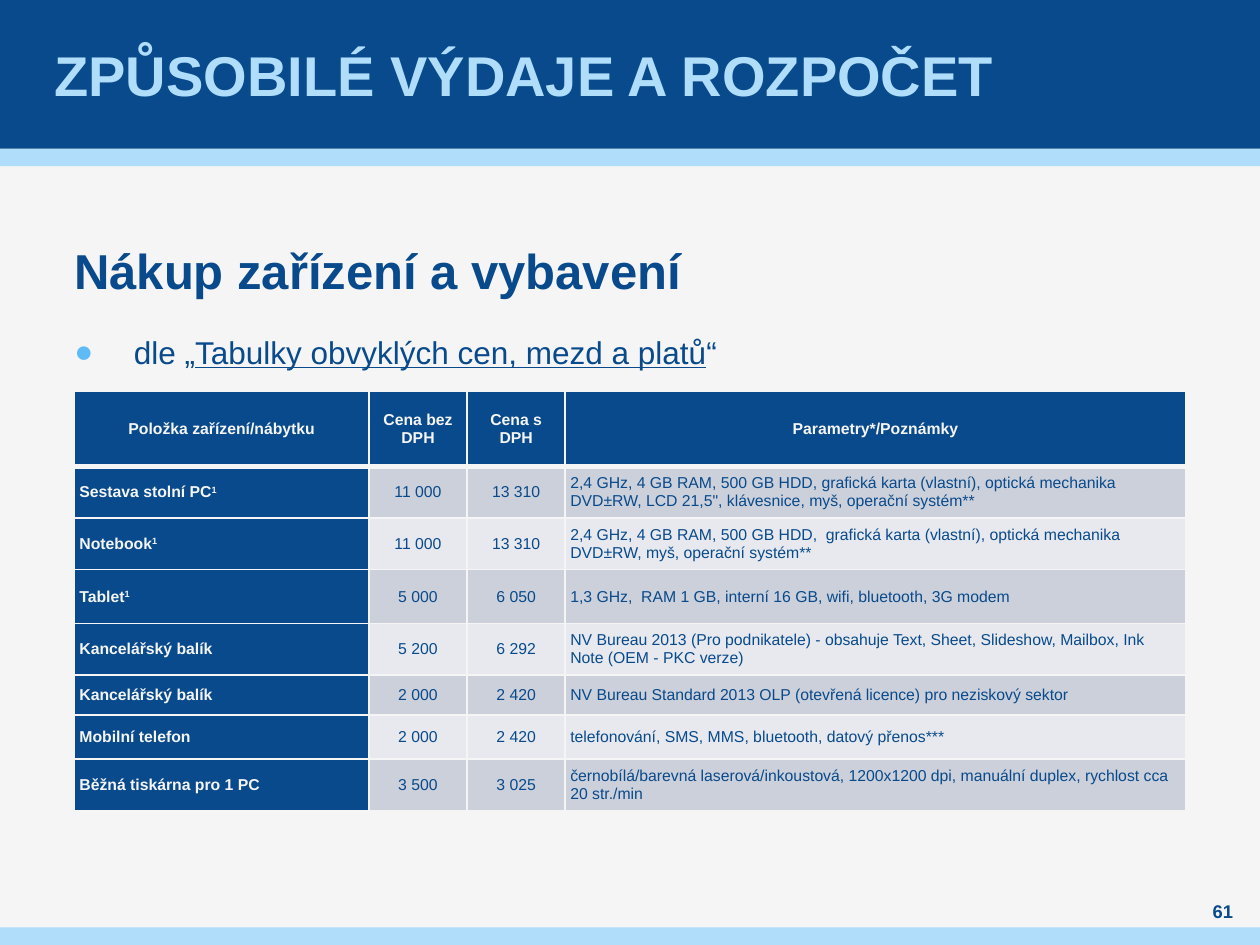
from dataclasses import dataclass

from lxml.etree import SubElement
from pptx import Presentation
from pptx.dml.color import RGBColor
from pptx.enum.shapes import MSO_SHAPE as Shape
from pptx.enum.text import MSO_ANCHOR as Anchor, MSO_AUTO_SIZE as AutoSize, PP_ALIGN as Align
from pptx.oxml.ns import qn
from pptx.util import Pt


@dataclass(frozen=True)
class Theme:
    font: str = "Arial"
    navy: str = "084A8B"
    sky: str = "AFDDFA"
    bullet: str = "5FBBF5"
    paper: str = "F5F5F5"
    bands: tuple = ("CCD0DA", "E7E9EE")
    title: float = 32
    heading: float = 28
    body: float = 18
    number: float = 10.5
    table: float = 9


theme = Theme()


def add_run(paragraph, text, size, color, bold=False):
    run = paragraph.add_run()
    run.text = text
    run.font.name = theme.font
    run.font.size = Pt(size)
    run.font.bold = bold
    run.font.color.rgb = RGBColor.from_string(color)
    return run


def set_frame(frame, anchor, side=0):
    frame.word_wrap = True
    frame.auto_size = AutoSize.NONE
    frame.vertical_anchor = anchor
    frame.margin_left = frame.margin_right = Pt(side)
    frame.margin_top = frame.margin_bottom = 0


presentation = Presentation()
presentation.slide_width = Pt(720)
presentation.slide_height = Pt(540)
slide = presentation.slides.add_slide(presentation.slide_layouts[1])
slide.background.fill.solid()
slide.background.fill.fore_color.rgb = RGBColor.from_string(theme.paper)

bars = [(85, 10, theme.sky), (0, 85, theme.navy), (530, 10, theme.sky)]
for position, (top, height, color) in enumerate(bars, start=2):
    bar = slide.shapes.add_shape(Shape.RECTANGLE, 0, Pt(top), Pt(720), Pt(height))
    bar.shadow.inherit = False
    bar.fill.solid()
    bar.fill.fore_color.rgb = RGBColor.from_string(color)
    bar.line.fill.background()
    slide.shapes._spTree.insert(position, bar._element)

title = slide.shapes.title
title.left, title.top, title.width, title.height = Pt(28.2), 0, Pt(663), Pt(85)
set_frame(title.text_frame, Anchor.MIDDLE, 2.9)
paragraph = title.text_frame.paragraphs[0]
paragraph.alignment = Align.LEFT
add_run(paragraph, "ZPŮSOBILÉ VÝDAJE A ROZPOČET", theme.title, theme.sky, True)

body = slide.placeholders[1]
body.left, body.top, body.width, body.height = Pt(42.5), Pt(142), Pt(635), Pt(340)
set_frame(body.text_frame, Anchor.TOP)
heading = body.text_frame.paragraphs[0]
item = body.text_frame.add_paragraph()
item.level = 1
for paragraph, alignment, indent in [(heading, Align.LEFT, 0), (item, Align.JUSTIFY, 34)]:
    paragraph.alignment = alignment
    paragraph.line_spacing = Pt(28.8)
    paragraph.space_before = paragraph.space_after = Pt(6)
    properties = paragraph._p.get_or_add_pPr()
    properties.set("marL", str(Pt(indent)))
    properties.set("indent", str(-Pt(indent)))
    if indent:
        bullet_color = SubElement(properties, qn("a:buClr"))
        SubElement(bullet_color, qn("a:srgbClr"), val=theme.bullet)
        SubElement(properties, qn("a:buFont"), typeface=theme.font)
        SubElement(properties, qn("a:buChar"), char="●")
    else:
        SubElement(properties, qn("a:buNone"))
add_run(heading, "Nákup zařízení a vybavení", theme.heading, theme.navy, True)
add_run(item, "dle „", theme.body, theme.navy)
add_run(item, "Tabulky obvyklých cen, mezd a platů", theme.body, theme.navy).font.underline = True
add_run(item, "“", theme.body, theme.navy)

number = slide.shapes.add_textbox(Pt(680.4), Pt(513.4), Pt(36.7), Pt(14.4))
set_frame(number.text_frame, Anchor.MIDDLE)
paragraph = number.text_frame.paragraphs[0]
paragraph.alignment = Align.CENTER
add_run(paragraph, "61", theme.number, theme.navy, True)

rows = [
    ("Položka zařízení/nábytku", "Cena bez DPH", "Cena s DPH", "Parametry*/Poznámky"),
    ("Sestava stolní PC^1", "11 000", "13 310",
     "2,4 GHz, 4 GB RAM, 500 GB HDD, grafická karta (vlastní), optická mechanika "
     "DVD±RW, LCD 21,5\", klávesnice, myš, operační systém**"),
    ("Notebook^1", "11 000", "13 310",
     "2,4 GHz, 4 GB RAM, 500 GB HDD,  grafická karta (vlastní), optická mechanika "
     "DVD±RW, myš, operační systém**"),
    ("Tablet^1", "5 000", "6 050",
     "1,3 GHz,  RAM 1 GB, interní 16 GB, wifi, bluetooth, 3G modem"),
    ("Kancelářský balík", "5 200", "6 292",
     "NV Bureau 2013 (Pro podnikatele) - obsahuje Text, Sheet, Slideshow, Mailbox, Ink "
     "Note (OEM - PKC verze)"),
    ("Kancelářský balík", "2 000", "2 420",
     "NV Bureau Standard 2013 OLP (otevřená licence) pro neziskový sektor"),
    ("Mobilní telefon", "2 000", "2 420", "telefonování, SMS, MMS, bluetooth, datový přenos***"),
    ("Běžná tiskárna pro 1 PC", "3 500", "3 025",
     "černobílá/barevná laserová/inkoustová, 1200x1200 dpi, manuální duplex, rychlost cca "
     "20 str./min"),
]
widths = [168.3, 56.1, 56.1, 354.5]
heights = [43, 29.5, 29.5, 30.8, 29.5, 22.9, 25.1, 29.5]

table = slide.shapes.add_table(
    len(rows), len(widths), Pt(42.5), Pt(223.6), Pt(sum(widths)), Pt(sum(heights))
).table
for column, width in zip(table.columns, widths):
    column.width = Pt(width)
for row_index, (row, height) in enumerate(zip(rows, heights)):
    table.rows[row_index].height = Pt(height)
    for column_index, text in enumerate(row):
        cell = table.cell(row_index, column_index)
        strong = row_index == 0 or column_index == 0
        cell.vertical_anchor = Anchor.MIDDLE
        cell.margin_left = cell.margin_right = Pt(2.9)
        cell.margin_top = cell.margin_bottom = 0
        cell_properties = cell._tc.get_or_add_tcPr()
        for side in ("L", "R", "T", "B"):
            thick = (row_index, side) in ((0, "B"), (1, "T"))
            border = SubElement(cell_properties, qn(f"a:ln{side}"), w=str(Pt(3 if thick else 1)))
            SubElement(SubElement(border, qn("a:solidFill")), qn("a:srgbClr"), val=theme.paper)
        cell.fill.solid()
        fill = theme.navy if strong else theme.bands[(row_index - 1) % 2]
        cell.fill.fore_color.rgb = RGBColor.from_string(fill)
        paragraph = cell.text_frame.paragraphs[0]
        centered = row_index == 0 or column_index in (1, 2)
        paragraph.alignment = Align.CENTER if centered else Align.LEFT
        color = theme.paper if strong else theme.navy
        label, _, superscript = text.partition("^")
        add_run(paragraph, label, theme.table, color, strong)
        if superscript:
            run = add_run(paragraph, superscript, theme.table, color, strong)
            run._r.get_or_add_rPr().set("baseline", "30000")

presentation.save("out.pptx")
